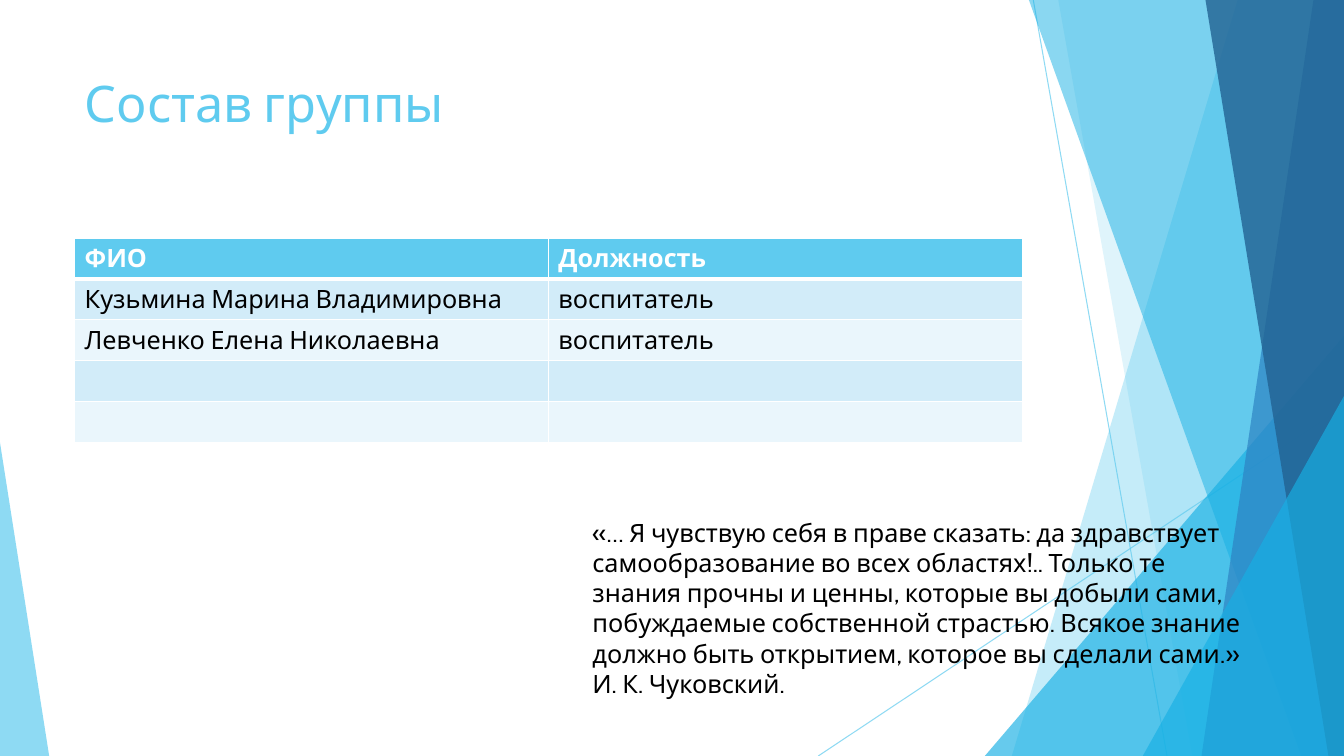
from pptx import Presentation
from pptx.dml.color import RGBColor
from pptx.enum import shapes, text
from pptx.oxml import ns, xmlchemy
from pptx.util import Cm, Pt

WIDE, HIGH = 33.87, 19.05
FONT = "Cabin"
COLORS = {
    "sky": "5FCBEF", "cyan": "17B0E4", "blue": "2E83C3", "navy": "226292",
    "odd": "D2ECF9", "even": "EAF6FC", "white": "FFFFFF", "black": "000000",
}

TITLE = "Состав группы"
STAFF = [
    ("ФИО", "Должность"),
    ("Кузьмина Марина Владимировна", "воспитатель"),
    ("Левченко Елена Николаевна", "воспитатель"),
    ("", ""),
    ("", ""),
]
QUOTE = [
    "«… Я чувствую себя в праве сказать: да здравствует самообразование "
    "во всех областях!.. Только те знания прочны и ценны, которые вы добыли "
    "сами, побуждаемые собственной страстью. Всякое знание должно быть "
    "открытием, которое вы сделали сами.»",
    "И. К. Чуковский.",
]

# Lines: x1, y1, x2, y2
LINES = [(26.04, 0, 29.41, HIGH), (WIDE, 10.24, 20.62, HIGH)]
# Bands reach the right edge: top x, bottom x, colour, opacity %
# Wedges stand on the bottom edge: left, top, width, apex, colour, opacity %
DECOR = [
    ("band", 31.19, 25.5, "sky", 36),
    ("band", 26.67, 30.05, "sky", 20),
    ("wedge", 24.82, 8.46, 9.05, 1, "cyan", 66),
    ("band", 25.93, 32.79, "cyan", 50),
    ("band", 33.1, 30.28, "blue", 70),
    ("band", 30.38, 33.48, "navy", 80),
    ("wedge", 28.8, 9.98, 5.07, 1, "cyan", 66),
    ("wedge", 0, 11.15, 1.24, 0, "sky", 70),
]


def rgb(name):
    return RGBColor.from_string(COLORS[name])


def add(parent, tag, **attrs):
    node = xmlchemy.OxmlElement(tag)
    for key, value in attrs.items():
        node.set(key, str(value))
    parent.append(node)
    return node


def fade(shape, share):
    """Give every colour of the shape the opacity, in percent."""
    for color in shape._element.spPr.iter(ns.qn("a:srgbClr")):
        add(color, "a:alpha", val=share * 1000)


def paint(shape, color, share):
    shape.shadow.inherit = False
    shape.fill.solid()
    shape.fill.fore_color.rgb = rgb(color)
    shape.line.fill.background()
    fade(shape, share)


def style(par, size, color, bold=False):
    par.alignment = text.PP_ALIGN.LEFT
    par.font.name = FONT
    par.font.size = Pt(size)
    par.font.bold = bold
    par.font.color.rgb = rgb(color)


def draw_line(slide, x1, y1, x2, y2):
    line = slide.shapes.add_connector(
        shapes.MSO_CONNECTOR.STRAIGHT, Cm(x1), Cm(y1), Cm(x2), Cm(y2))
    line.line.width = Pt(0.75)
    line.line.color.rgb = rgb("sky")
    fade(line, 70)
    add(line._element.spPr, "a:effectLst")


def draw_band(slide, top, low, color, share):
    build = slide.shapes.build_freeform(Cm(top), 0)
    build.add_line_segments(
        [(Cm(WIDE), 0), (Cm(WIDE), Cm(HIGH)), (Cm(low), Cm(HIGH))])
    paint(build.convert_to_shape(), color, share)


def draw_wedge(slide, left, top, width, apex, color, share):
    wedge = slide.shapes.add_shape(
        shapes.MSO_SHAPE.ISOSCELES_TRIANGLE,
        Cm(left), Cm(top), Cm(width), Cm(HIGH - top))
    wedge.adjustments[0] = apex
    paint(wedge, color, share)


def fill_cell(cell, words, row):
    props = cell._tc.get_or_add_tcPr()
    for side in "LRTB":
        thick = 3 if (row, side) in ((0, "B"), (1, "T")) else 1
        edge = add(props, f"a:ln{side}", w=Pt(thick))
        add(add(edge, "a:solidFill"), "a:srgbClr", val=COLORS["white"])
    head = row == 0
    cell.fill.solid()
    cell.fill.fore_color.rgb = rgb(
        "sky" if head else "odd" if row % 2 else "even")
    cell.text = words
    style(cell.text_frame.paragraphs[0], 18,
          "white" if head else "black", head)


def add_staff(slide):
    table = slide.shapes.add_table(
        len(STAFF), len(STAFF[0]),
        Cm(1.88), Cm(6), Cm(23.88), Cm(1.03 * len(STAFF))).table
    for row, names in enumerate(STAFF):
        for col, words in enumerate(names):
            fill_cell(table.cell(row, col), words, row)


def add_title(slide):
    title = slide.shapes.title
    title.left, title.top = Cm(1.88), Cm(1.7)
    title.width, title.height = Cm(23.88), Cm(3.66)
    frame = title.text_frame
    frame.text = TITLE
    frame.vertical_anchor = text.MSO_ANCHOR.TOP
    style(frame.paragraphs[0], 36, "sky")


def add_quote(slide):
    box = slide.shapes.add_textbox(Cm(14.68), Cm(12.9), Cm(16.94), Cm(4.88))
    frame = box.text_frame
    frame.word_wrap = True
    frame.text = "\n".join(QUOTE)
    for par in frame.paragraphs:
        style(par, 18, "black")


def main():
    deck = Presentation()
    deck.slide_width, deck.slide_height = Cm(WIDE), Cm(HIGH)
    slide = deck.slides.add_slide(deck.slide_layouts[5])
    for ends in LINES:
        draw_line(slide, *ends)
    draw = {"band": draw_band, "wedge": draw_wedge}
    for kind, *rest in DECOR:
        draw[kind](slide, *rest)
    add_title(slide)
    add_staff(slide)
    add_quote(slide)
    deck.save("out.pptx")


if __name__ == "__main__":
    main()
